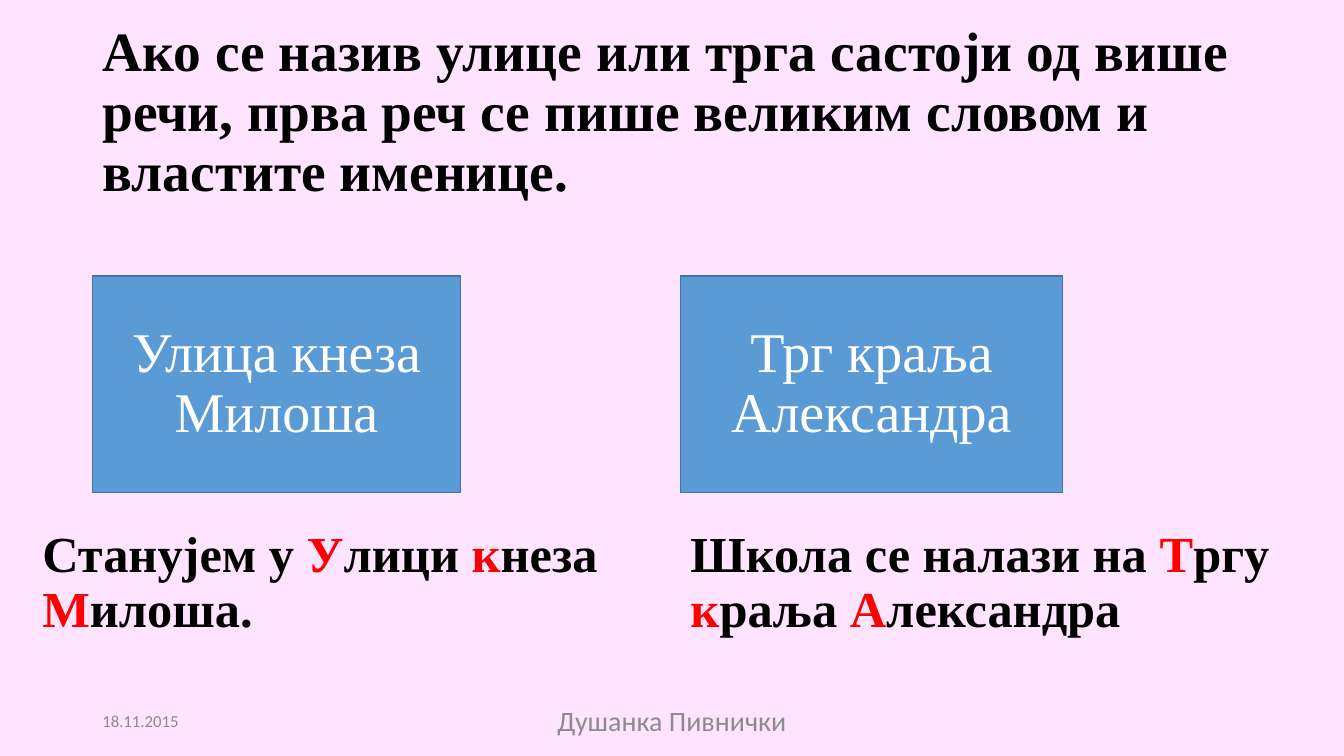
from dataclasses import dataclass

from lxml.etree import SubElement
from pptx import Presentation
from pptx.dml.color import RGBColor
from pptx.enum.text import MSO_ANCHOR, MSO_AUTO_SIZE, PP_ALIGN
from pptx.oxml.ns import qn
from pptx.util import Pt


@dataclass(frozen=True)
class Theme:
    """Colours, fonts and type sizes of the lesson."""
    background: str = "FFE4FF"
    ink: str = "000000"
    accent: str = "FF0000"
    card: str = "5B9BD5"
    card_edge: str = "43739E"
    card_ink: str = "FFFFFF"
    muted: str = "8C8C8C"
    serif: str = "Times New Roman"
    sans: str = "Calibri"
    title_size: float = 39.6
    card_size: float = 40
    sentence_size: float = 36
    footer_size: float = 20
    date_size: float = 12


class LessonPage:
    """Places styled elements on one page."""

    def __init__(self, page, theme):
        """Keep the page and theme, and paint the background."""
        self.page = page
        self.theme = theme
        self.paint(page.background.fill, theme.background)

    def paint(self, fill, color):
        """Fill with one solid colour."""
        fill.solid()
        fill.fore_color.rgb = RGBColor.from_string(color)

    def place(self, box, left, top, width, height):
        """Move a box to a position in points."""
        box.left, box.top = Pt(left), Pt(top)
        box.width, box.height = Pt(width), Pt(height)

    def set_text(self, box, parts, font, size, color, bold=False,
                 align=PP_ALIGN.LEFT, anchor=MSO_ANCHOR.MIDDLE):
        """Set one paragraph, with every second part in the accent colour."""
        frame = box.text_frame
        frame.word_wrap = True
        frame.auto_size = MSO_AUTO_SIZE.NONE
        frame.vertical_anchor = anchor
        para = frame.paragraphs[0]
        para.alignment = align
        para.font.name = font
        para.font.size = Pt(size)
        para.font.bold = bold
        for index, part in enumerate(parts):
            span = para.add_run()
            span.text = part
            shade = self.theme.accent if index % 2 else color
            span.font.color.rgb = RGBColor.from_string(shade)
        return para

    def space(self, para, before):
        """Tighten the lines and set the space before."""
        para.line_spacing = 0.9
        para.space_before = Pt(before)

    def plain_list(self, para):
        """Remove the bullet and indent of a body paragraph."""
        self.space(para, 10)
        properties = para._p.get_or_add_pPr()
        properties.set("marL", "0")
        properties.set("indent", "0")
        bullet = SubElement(properties, qn("a:buNone"))
        defaults = properties.find(qn("a:defRPr"))
        defaults.addprevious(bullet)

    def title(self, text, *bounds):
        """Fill the title placeholder."""
        box = self.page.shapes.title
        self.place(box, *bounds)
        para = self.set_text(box, [text], self.theme.serif,
                             self.theme.title_size, self.theme.ink, bold=True)
        self.space(para, 0)

    def card(self, slot, text, *bounds):
        """Turn a body placeholder into a filled card."""
        box = self.page.placeholders[slot]
        self.place(box, *bounds)
        self.paint(box.fill, self.theme.card)
        box.line.color.rgb = RGBColor.from_string(self.theme.card_edge)
        box.line.width = Pt(1)
        para = self.set_text(box, [text], self.theme.serif,
                             self.theme.card_size, self.theme.card_ink,
                             align=PP_ALIGN.CENTER)
        self.plain_list(para)

    def sentence(self, slot, parts, *bounds):
        """Set an example sentence in a body placeholder."""
        box = self.page.placeholders[slot]
        self.place(box, *bounds)
        para = self.set_text(box, parts, self.theme.serif,
                             self.theme.sentence_size, self.theme.ink,
                             bold=True, anchor=MSO_ANCHOR.BOTTOM)
        self.plain_list(para)

    def footer(self, text, size, align, left, width):
        """Add a muted text box in the footer row."""
        box = self.page.shapes.add_textbox(
            Pt(left), Pt(500.4), Pt(width), Pt(28.8))
        self.set_text(box, [text], self.theme.sans, size, self.theme.muted,
                      align=align)


def main():
    """Build and save the lesson page."""
    deck = Presentation()
    deck.slide_width, deck.slide_height = Pt(960), Pt(540)
    theme = Theme()
    lesson = LessonPage(deck.slides.add_slide(deck.slide_layouts[4]), theme)

    lesson.footer("18.11.2015", theme.date_size, PP_ALIGN.LEFT, 66, 216)
    lesson.footer("Душанка Пивнички", theme.footer_size, PP_ALIGN.CENTER,
                  318, 324)
    lesson.title("Ако се назив улице или трга састоји од више речи, прва реч "
                 "се пише великим словом и властите именице.",
                 66, 28.8, 828, 104.4)

    card_top, card_height = 197.2, 154.8
    right_column = 486
    lesson.card(2, "Улица кнеза Милоша", 66, card_top, 263, card_height)
    lesson.card(4, "Трг краља Александра",
                right_column, card_top, 273, card_height)
    lesson.sentence(
        1, ["Станујем у ", "У", "лици ", "к", "неза ", "М", "илоша."],
        23, 365, 456.5, 94.4)
    lesson.sentence(
        3, ["Школа се налази на ", "Т", "ргу ", "к", "раља ", "А",
            "лександра"],
        right_column, 380.2, 448.6, 79.2)

    deck.save("out.pptx")


if __name__ == "__main__":
    main()
